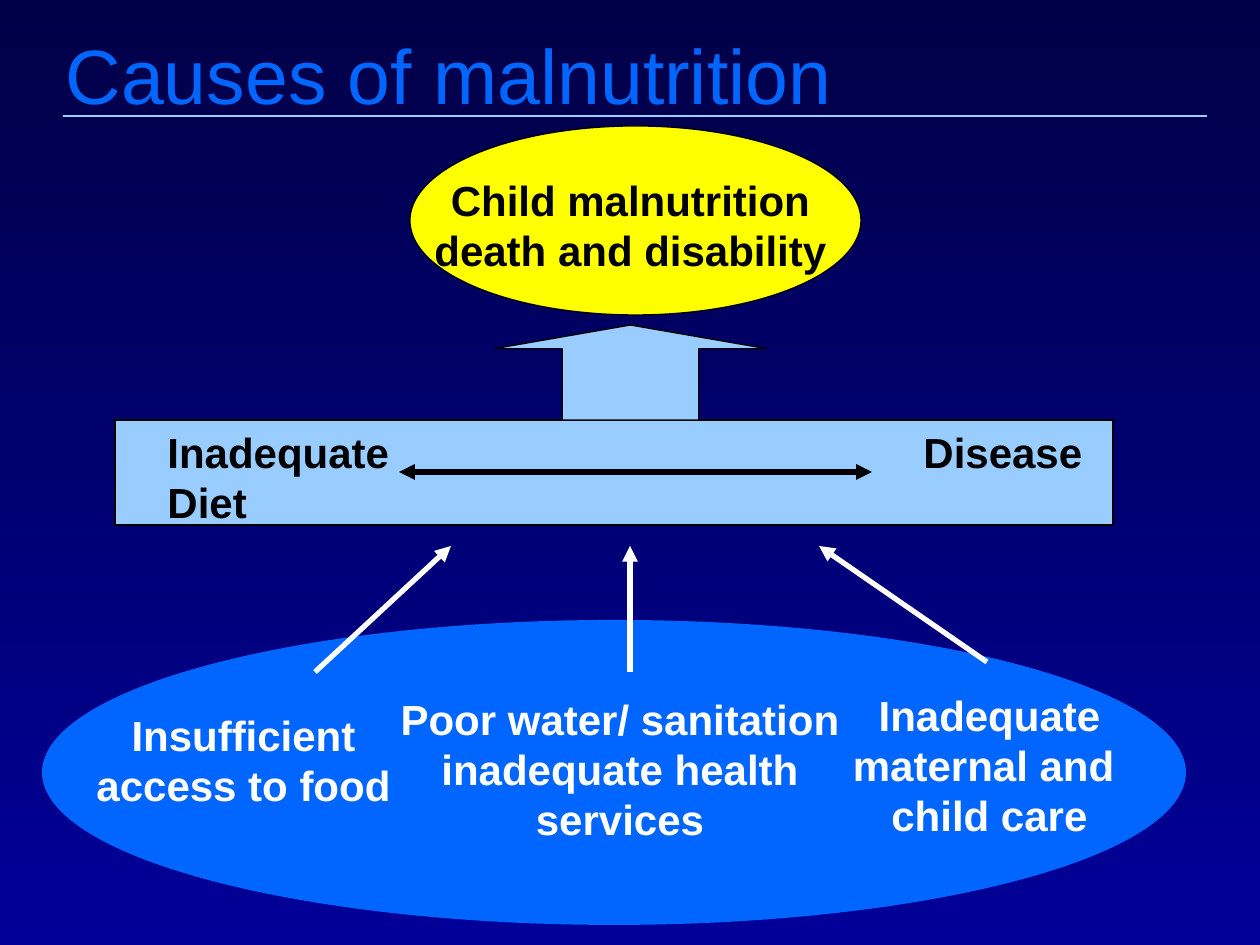
"""Build the slide on the causes of malnutrition."""
from dataclasses import dataclass

from lxml import etree
from pptx import Presentation
from pptx import util as u
from pptx.dml.color import RGBColor
from pptx.enum import shapes, text
from pptx.oxml.ns import qn


@dataclass(frozen=True)
class Theme:
    """Colours, type sizes and line widths."""
    font: str = "Arial"
    night: str = "000047"
    navy: str = "000099"
    blue: str = "0066FF"
    sky: str = "99CCFF"
    yellow: str = "FFFF00"
    black: str = "000000"
    white: str = "FFFFFF"
    title_size: int = 44
    label_size: int = 24
    thin: float = 0.75
    thick: float = 3


def emu(px):
    """Turn px at 126 to the inch into EMU."""
    return u.Emu(round(px * 914400 / 126))


def rgb(colour):
    """Turn a hex string into a colour."""
    return RGBColor.from_string(colour)


class SlideBuilder:
    """Draw styled elements on one slide."""

    def __init__(self, slide, theme):
        """Keep the slide and its theme."""
        self.slide, self.theme = slide, theme

    def background(self, top, bottom):
        """Fill the background from top to bottom."""
        fill = self.slide.background.fill
        fill.gradient()
        fill.gradient_angle = 270
        for stop, colour in zip(fill.gradient_stops, (top, bottom)):
            stop.color.rgb = rgb(colour)

    def set_wording(self, frame, wording, size, colour, align, bold):
        """Set wording and format its runs."""
        frame.text = wording
        for paragraph in frame.paragraphs:
            paragraph.alignment = align
            for run in paragraph.runs:
                run.font.name, run.font.size = self.theme.font, u.Pt(size)
                run.font.bold, run.font.color.rgb = bold, rgb(colour)

    def title(self, wording, box):
        """Place and format the title placeholder."""
        heading = self.slide.shapes.title
        heading.left, heading.top, heading.width, heading.height = map(emu, box)
        frame = heading.text_frame
        frame.auto_size = text.MSO_AUTO_SIZE.NONE
        frame.vertical_anchor = text.MSO_ANCHOR.MIDDLE
        self.set_wording(frame, wording, self.theme.title_size, self.theme.blue,
                         text.PP_ALIGN.LEFT, False)

    def shape(self, kind, box, fill, outline=None):
        """Add a filled preset shape."""
        figure = self.slide.shapes.add_shape(kind, *map(emu, box))
        figure.shadow.inherit = False
        figure.fill.solid()
        figure.fill.fore_color.rgb = rgb(fill)
        if outline:
            figure.line.color.rgb = rgb(outline)
            figure.line.width = u.Pt(self.theme.thin)
        else:
            figure.line.fill.background()
        return figure

    def label(self, wording, box, colour, align=text.PP_ALIGN.CENTER):
        """Add a bold label that does not wrap."""
        frame = self.slide.shapes.add_textbox(*map(emu, box)).text_frame
        frame.word_wrap = False
        frame.auto_size = text.MSO_AUTO_SIZE.SHAPE_TO_FIT_TEXT
        self.set_wording(frame, wording, self.theme.label_size, colour, align, True)
        return frame

    def tab_stop(self, paragraph, px):
        """Give a paragraph one left tab stop."""
        stops = etree.SubElement(paragraph._p.get_or_add_pPr(), qn("a:tabLst"))
        etree.SubElement(stops, qn("a:tab"), pos=str(emu(px)), algn="l")

    def line(self, start, end, colour, width, heads=()):
        """Add a straight line with arrowheads at the named ends."""
        link = self.slide.shapes.add_connector(
            shapes.MSO_CONNECTOR.STRAIGHT, *map(emu, start + end))
        link.line.color.rgb = rgb(colour)
        link.line.width = u.Pt(width)
        for head in heads:
            etree.SubElement(link.line._get_or_add_ln(), qn(f"a:{head}"), type="triangle")
        etree.SubElement(link._element.spPr, qn("a:effectLst"))


def main():
    """Build and save the slide."""
    theme = Theme()
    deck = Presentation()
    deck.slide_width, deck.slide_height = emu(1260), emu(945)
    page = SlideBuilder(deck.slides.add_slide(deck.slide_layouts[5]), theme)
    preset = shapes.MSO_SHAPE

    page.background(theme.night, theme.navy)
    page.title("Causes of malnutrition", (53, 21, 1155, 105))
    page.line((63, 116), (1207, 116), theme.sky, theme.thin)

    page.shape(preset.OVAL, (410, 126, 451, 189), theme.yellow, theme.black)
    page.shape(preset.RECTANGLE, (115, 420, 998, 105), theme.sky, theme.black)
    page.shape(preset.OVAL, (42, 620, 1144, 305), theme.blue)

    page.label("Child malnutrition\ndeath and disability", (422, 168, 417, 113), theme.black)
    immediate_causes = page.label("Inadequate\tDisease\nDiet", (155, 420, 940, 113),
                                  theme.black, text.PP_ALIGN.LEFT)
    page.tab_stop(immediate_causes.paragraphs[0], 756)

    underlying_causes = [
        ("Insufficient\naccess to food", (84, 703, 319, 113), (315, 672), (451, 546)),
        ("Inadequate\nmaternal and \nchild care", (840, 683, 299, 164), (987, 662), (819, 546)),
        ("Poor water/ sanitation\ninadequate health\nservices", (388, 687, 464, 164),
         (630, 672), (630, 546)),
    ]
    for wording, box, start, end in underlying_causes:
        page.label(wording, box, theme.white)
        page.line(start, end, theme.white, theme.thick, ["tailEnd"])

    outcome_arrow = page.shape(preset.UP_ARROW, (494, 325, 273, 95), theme.sky, theme.black)
    outcome_arrow.adjustments[0], outcome_arrow.adjustments[1] = 0.5, 0.25
    page.line((399, 472), (872, 472), theme.black, theme.thick, ["headEnd", "tailEnd"])

    deck.save("out.pptx")


if __name__ == "__main__":
    main()
